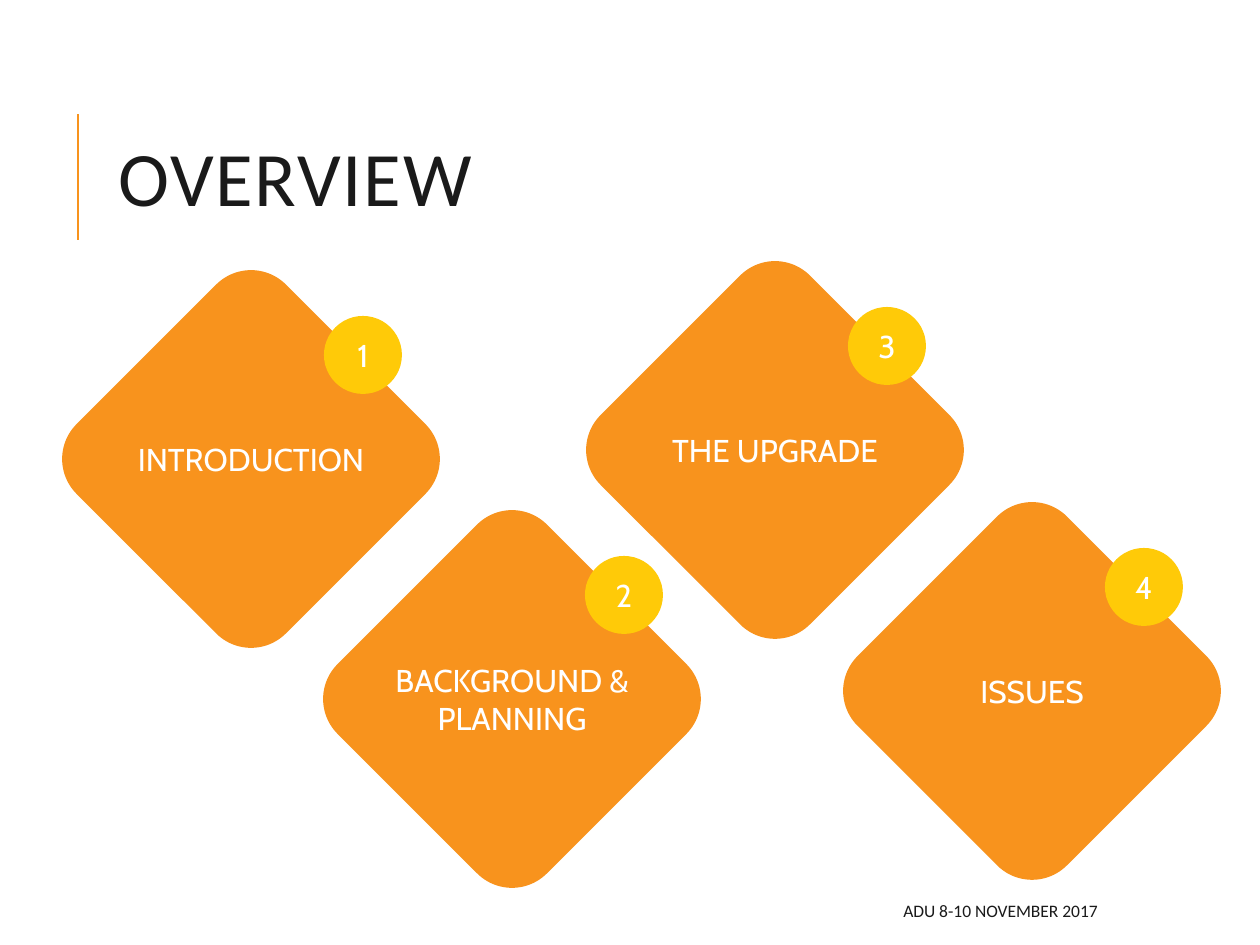
import pptx
import pptx.util
import pptx.dml.color
import pptx.enum.shapes
import pptx.enum.text
import pptx.oxml.ns
import lxml.etree

SCALE = 914400 / 126
COLORS = {"orange": "F8931D", "yellow": "FFCA08", "dark": "1A1A1A", "white": "FFFFFF"}
SIDE, DOT = 296, 78
DOT_DX, DOT_DY = 112, -104
LABEL_W, LINE_H, PAD_H = 284, 39, 11
# centre x, centre y, label, lines of text
STEPS = [
    (251, 459, "INTRODUCTION", 1),
    (512, 699, "BACKGROUND & PLANNING", 2),
    (775, 450, "THE UPGRADE", 1),
    (1032, 691, "ISSUES", 1),
]
SHAPE = pptx.enum.shapes.MSO_SHAPE
ALIGN = pptx.enum.text.PP_ALIGN
MIDDLE = pptx.enum.text.MSO_ANCHOR.MIDDLE


def px(*values):
    return [pptx.util.Emu(round(v * SCALE)) for v in values]


def color(name):
    return pptx.dml.color.RGBColor.from_string(COLORS[name])


def centered(x, y, w, h):
    """Turn a centre and size into left, top, width, height."""
    return x - w / 2, y - h / 2, w, h


def write(shape, text, size, font, ink, align):
    frame = shape.text_frame
    frame.word_wrap = True
    frame.vertical_anchor = MIDDLE
    para = frame.paragraphs[0]
    para.text = text
    para.alignment = align
    para.font.size = pptx.util.Pt(size)
    para.font.name = font
    para.font.color.rgb = color(ink)
    return para


def add_shape(slide, kind, box, fill):
    shape = slide.shapes.add_shape(kind, *px(*box))
    shape.shadow.inherit = False
    shape.fill.solid()
    shape.fill.fore_color.rgb = color(fill)
    shape.line.fill.background()
    return shape


def add_text(slide, box, *style):
    return write(slide.shapes.add_textbox(*px(*box)), *style)


def add_rule(slide, x, top, bottom):
    line = slide.shapes.add_connector(
        pptx.enum.shapes.MSO_CONNECTOR.STRAIGHT, *px(x, bottom, x, top))
    line.line.color.rgb = color("orange")
    line.line.width = pptx.util.Pt(1.5)
    lxml.etree.SubElement(line._element.spPr, pptx.oxml.ns.qn("a:effectLst"))


def add_title(slide):
    para = add_text(slide, (106, 81, 1004, 207), "OVERVIEW", 44, "Calibri", "dark", ALIGN.LEFT)
    para.line_spacing = 0.8
    para.runs[0].font._element.set("spc", "100")


def add_step(slide, number, x, y, label, lines):
    """Draw a diamond with its numbered dot and its label."""
    diamond = add_shape(slide, SHAPE.ROUNDED_RECTANGLE, centered(x, y, SIDE, SIDE), "orange")
    diamond.rotation = 45
    dot = add_shape(slide, SHAPE.OVAL, centered(x + DOT_DX, y + DOT_DY, DOT, DOT), "yellow")
    write(dot, str(number), 18, "Cabin", "white", ALIGN.CENTER)
    box = centered(x, y, LABEL_W, PAD_H + lines * LINE_H)
    add_text(slide, box, label, 18, "Cabin", "white", ALIGN.CENTER)


def main():
    deck = pptx.Presentation()
    deck.slide_width, deck.slide_height = px(1260, 945)
    slide = deck.slides.add_slide(deck.slide_layouts[6])
    add_rule(slide, 78, 114, 240)
    add_title(slide)
    for number, step in enumerate(STEPS, 1):
        add_step(slide, number, *step)
    add_text(slide, (500, 892, 610, 38), "ADU 8-10 NOVEMBER 2017", 10, "Calibri", "dark", ALIGN.RIGHT)
    deck.save("out.pptx")


if __name__ == "__main__":
    main()
